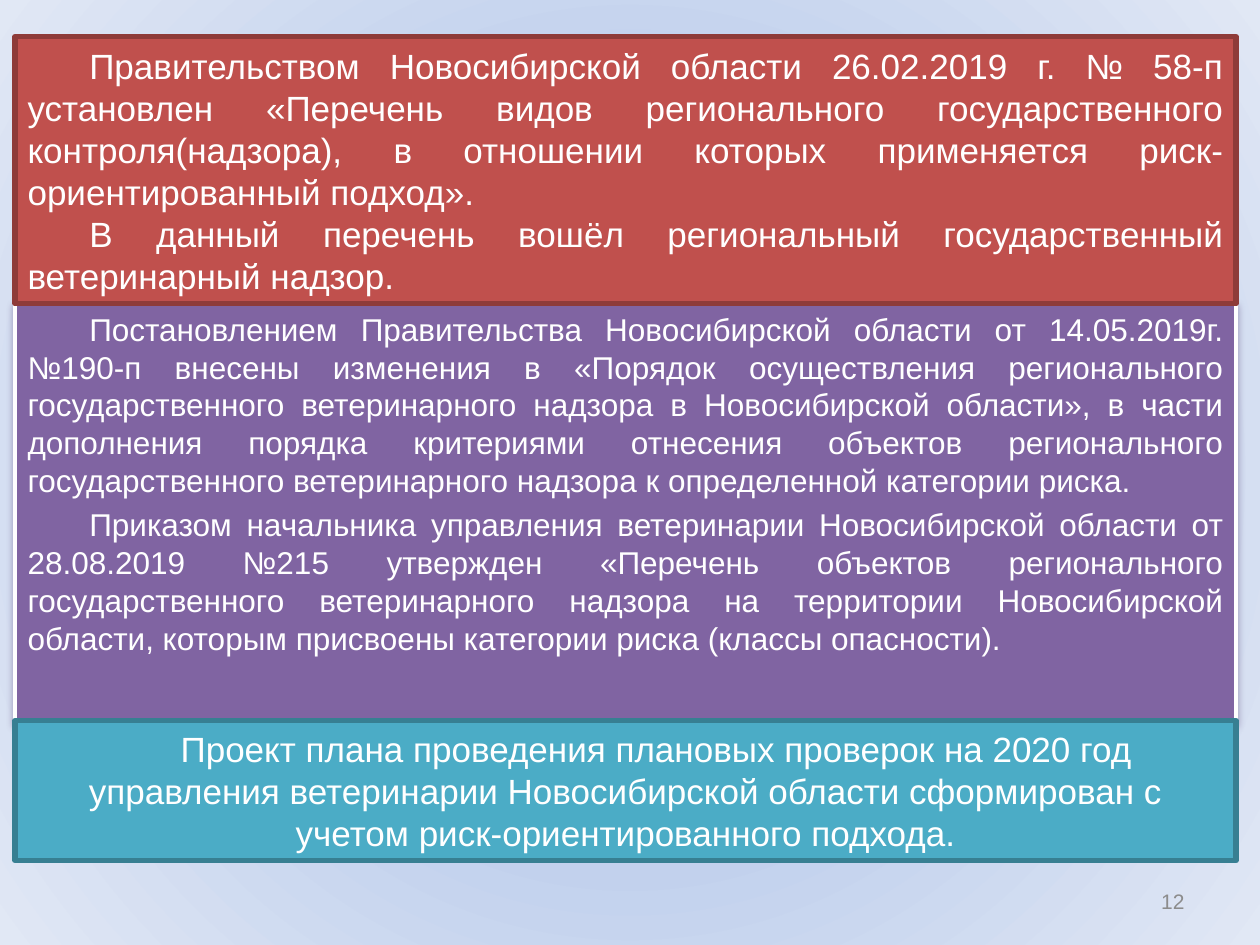
from dataclasses import dataclass

from pptx import Presentation
from pptx.dml.color import RGBColor
from pptx.enum.shapes import MSO_SHAPE
from pptx.enum.text import MSO_ANCHOR, PP_ALIGN
from pptx.oxml import parse_xml
from pptx.util import Inches, Pt

DRAWING_NS = 'xmlns:a="http://schemas.openxmlformats.org/drawingml/2006/main"'


@dataclass(frozen=True)
class Theme:
    font: str = "Arial"
    text: str = "FFFFFF"
    number: str = "8C8C8C"
    red: tuple = ("C0504D", "8E3B39")  # fill, line
    purple: tuple = ("8064A2", "FFFFFF")
    teal: tuple = ("4BACC6", "377F92")
    shadow: str = "4B3269"
    backdrop: tuple = ((0, "9AB5E4"), (50, "C2D1ED"), (100, "E1E8F5"))
    large: int = 20
    body: int = 18
    small: int = 12
    thick: float = 3.15
    thin: float = 2.5


THEME = Theme()

LAW = (
    "Правительством Новосибирской области 26.02.2019 г. № 58-п установлен "
    "«Перечень видов регионального государственного контроля(надзора), "
    "в отношении которых применяется риск-ориентированный подход».",
    "В данный перечень вошёл региональный государственный ветеринарный надзор.",
)
ORDERS = (
    "Постановлением Правительства Новосибирской области от 14.05.2019г. №190-п "
    "внесены изменения в «Порядок осуществления регионального государственного "
    "ветеринарного надзора в Новосибирской области», в части дополнения порядка "
    "критериями отнесения объектов регионального государственного ветеринарного "
    "надзора к определенной категории риска.",
    "Приказом начальника управления ветеринарии Новосибирской области "
    "от 28.08.2019 №215 утвержден «Перечень объектов регионального "
    "государственного ветеринарного надзора на территории Новосибирской области, "
    "которым присвоены категории риска (классы опасности). ",
)
PLAN = (
    "Проект плана проведения плановых проверок на 2020 год управления ветеринарии "
    "Новосибирской области сформирован с учетом риск-ориентированного подхода.",
)


def paint_background(page):
    """Radial gradient that spreads from the middle of the page."""
    page.background.fill.solid()
    stops = "".join(
        f'<a:gs pos="{share * 1000}"><a:srgbClr val="{color}"/></a:gs>'
        for share, color in THEME.backdrop
    )
    gradient = parse_xml(
        f'<a:gradFill {DRAWING_NS} rotWithShape="1"><a:gsLst>{stops}</a:gsLst>'
        '<a:path path="circle"><a:fillToRect l="50000" t="50000" r="50000" b="50000"/>'
        "</a:path></a:gradFill>"
    )
    solid = page.background._cSld.find(".//{*}bgPr/{*}solidFill")
    solid.getparent().replace(solid, gradient)


def write_text(frame, texts, size, color, align, indent=0, space_before=0):
    """One paragraph per text, all in the same style."""
    frame.word_wrap = True
    frame.text = "\n".join(texts)
    for para in frame.paragraphs:
        para.alignment = align
        para.space_before = Pt(space_before)
        properties = para._p.get_or_add_pPr()
        properties.set("marL", "0")
        properties.set("indent", str(Inches(indent)))
        for span in para.runs:
            span.font.name = THEME.font
            span.font.size = Pt(size)
            span.font.color.rgb = RGBColor.from_string(color)


def add_panel(page, box, texts, colors, size, line_width,
              align=PP_ALIGN.JUSTIFY, anchor=MSO_ANCHOR.MIDDLE, space_before=0):
    """Filled rectangle with indented paragraphs."""
    panel = page.shapes.add_shape(MSO_SHAPE.RECTANGLE, *map(Inches, box))
    panel.shadow.inherit = False
    fill, line = colors
    panel.fill.solid()
    panel.fill.fore_color.rgb = RGBColor.from_string(fill)
    panel.line.color.rgb = RGBColor.from_string(line)
    panel.line.width = Pt(line_width)
    panel.text_frame.vertical_anchor = anchor
    write_text(panel.text_frame, texts, size, THEME.text, align, 0.49, space_before)
    return panel


def add_soft_shadow(panel):
    effects = panel._element.spPr.find("{*}effectLst")
    effects.append(parse_xml(
        f'<a:outerShdw {DRAWING_NS} blurRad="{Pt(4)}" dist="{Pt(2)}" dir="5400000" '
        f'rotWithShape="0"><a:srgbClr val="{THEME.shadow}"><a:alpha val="38000"/>'
        "</a:srgbClr></a:outerShdw>"
    ))


def add_page_number(page, box, number):
    label = page.shapes.add_textbox(*map(Inches, box))
    label.text_frame.vertical_anchor = MSO_ANCHOR.MIDDLE
    write_text(label.text_frame, [number], THEME.small, THEME.number, PP_ALIGN.RIGHT)


def main():
    deck = Presentation()
    deck.slide_width, deck.slide_height = Inches(10), Inches(7.5)
    page = deck.slides.add_slide(deck.slide_layouts[6])
    paint_background(page)

    # Three panels stacked without gaps
    left, width, top = 0.12, 9.69, 0.29
    boxes = []
    for height in (2.12, 3.31, 1.11):
        boxes.append((left, top, width, height))
        top += height
    law_box, orders_box, plan_box = boxes

    # The middle panel lies beneath its neighbours
    orders = add_panel(page, orders_box, ORDERS, THEME.purple, THEME.body, THEME.thin,
                       anchor=MSO_ANCHOR.TOP, space_before=3.6)
    add_soft_shadow(orders)
    add_page_number(page, (7.17, 6.95, 2.33, 0.4), "12")
    add_panel(page, plan_box, PLAN, THEME.teal, THEME.large, THEME.thick,
              align=PP_ALIGN.CENTER)
    add_panel(page, law_box, LAW, THEME.red, THEME.large, THEME.thick)

    deck.save("out.pptx")


if __name__ == "__main__":
    main()
